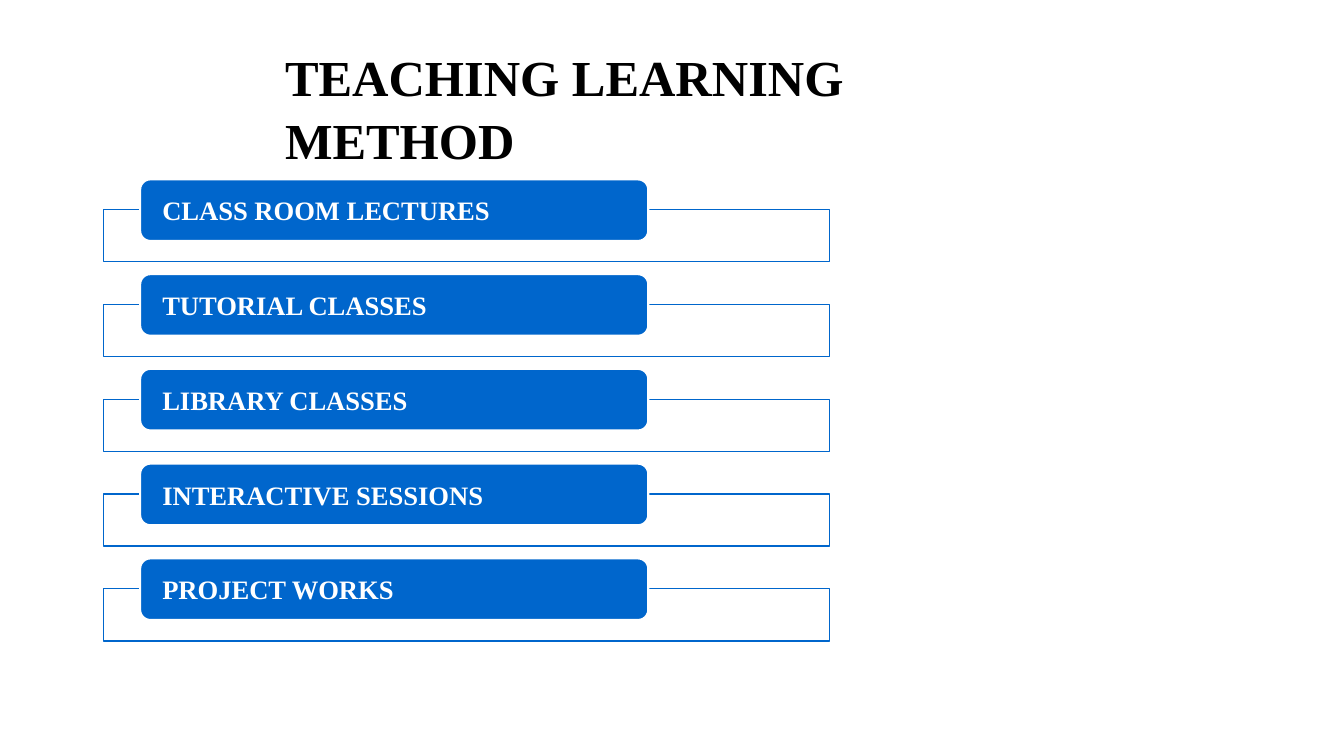
from typing import NamedTuple

from pptx import Presentation
from pptx import util as u
from pptx.dml.color import RGBColor
from pptx.enum import shapes, text
from pptx.oxml import parse_xml
from pptx.oxml.ns import nsdecls

FONT = "Times New Roman"
BLUE, WHITE, BLACK = "0066CC", "FFFFFF", "000000"
COL, ROW = 0.36, 0.94  # grid cell in inches
LEFT, TOP = 1.03, 1.78  # grid origin in inches


class Box(NamedTuple):
    """Place in grid columns and rows."""
    col: float
    row: float
    cols: float
    rows: float


class Style(NamedTuple):
    kind: int
    fill: str
    line: str
    line_pt: float
    opacity: int = 100


TITLE = Box(4.72, -1.51, 22.36, 0.75)
FRAME = Box(0, 0.32, 20, 0.55)
LABEL = Box(1, 0, 14, 0.65)
FRAME_STYLE = Style(shapes.MSO_SHAPE.RECTANGLE, WHITE, BLUE, 1, 90)
LABEL_STYLE = Style(shapes.MSO_SHAPE.ROUNDED_RECTANGLE, BLUE, WHITE, 1.5)
METHODS = ["CLASS ROOM LECTURES", "TUTORIAL CLASSES", "LIBRARY CLASSES",
           "INTERACTIVE SESSIONS", "PROJECT WORKS"]


def rgb(value: str) -> RGBColor:
    return RGBColor.from_string(value)


def place(box: Box, row: int = 0) -> list[int]:
    """Left, top, width and height of a box moved down by whole rows."""
    return [u.Inches(v) for v in (LEFT + box.col * COL, TOP + (box.row + row) * ROW,
                                  box.cols * COL, box.rows * ROW)]


def add_box(slide, box: Box, row: int, style: Style):
    sp = slide.shapes.add_shape(style.kind, *place(box, row))
    sp.shadow.inherit = False
    sp.fill.solid()
    sp.fill.fore_color.rgb = rgb(style.fill)
    if style.opacity < 100:
        color = sp.fill._xPr.find(".//{*}srgbClr")
        color.append(parse_xml(f'<a:alpha {nsdecls("a")} val="{style.opacity * 1000}"/>'))
    sp.line.color.rgb = rgb(style.line)
    sp.line.width = u.Pt(style.line_pt)
    return sp


def write(sp, words: str, *, size: float, color: str, side: float, top: float = 0,
          anchor=text.MSO_ANCHOR.TOP, spacing: float = 1) -> None:
    tf = sp.text_frame
    tf.word_wrap = True
    tf.vertical_anchor = anchor
    tf.margin_left = tf.margin_right = u.Inches(side)
    tf.margin_top, tf.margin_bottom = u.Inches(top), 0
    p = tf.paragraphs[0]
    p.alignment = text.PP_ALIGN.LEFT
    p.line_spacing = spacing
    r = p.add_run()
    r.text = words
    r.font.name, r.font.size, r.font.bold = FONT, u.Pt(size), True
    r.font.color.rgb = rgb(color)


def main() -> None:
    prs = Presentation()
    prs.slide_width, prs.slide_height = u.Inches(13.33), u.Inches(7.5)
    slide = prs.slides.add_slide(prs.slide_layouts[6])

    title = slide.shapes.add_textbox(*place(TITLE))
    write(title, "TEACHING LEARNING METHOD", size=36, color=BLACK, side=0.1,
          top=0.07, spacing=1.04)

    for row, method in enumerate(METHODS):
        add_box(slide, FRAME, row, FRAME_STYLE)
        label = add_box(slide, LABEL, row, LABEL_STYLE)
        write(label, method, size=19, color=WHITE, side=0.19,
              anchor=text.MSO_ANCHOR.MIDDLE)

    prs.save("out.pptx")


if __name__ == "__main__":
    main()
